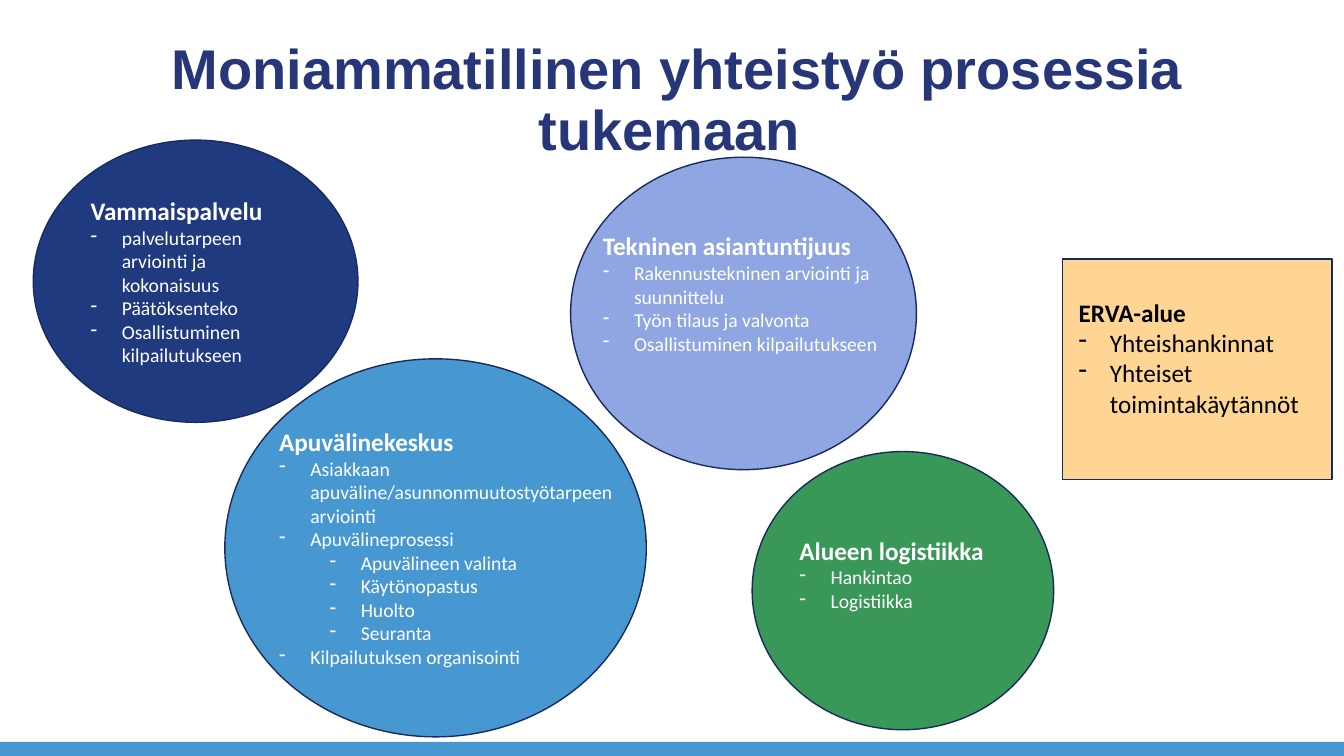
from dataclasses import dataclass

from lxml import etree
from pptx import Presentation
from pptx import util as u
from pptx.dml.color import RGBColor
from pptx.enum import shapes, text
from pptx.oxml import ns

PX = 9144  # EMU per px, 100 px to the inch


@dataclass(frozen=True)
class Theme:
    title_font: str = "Arial"
    body_font: str = "Calibri"
    title_size: int = 40
    heading_size: int = 18
    item_size: int = 14
    title: str = "273678"
    outline: str = "182B5E"
    navy: str = "203A7F"
    blue: str = "4798D1"
    lavender: str = "8FA6E3"
    green: str = "399758"
    sand: str = "FFD594"
    white: str = "FFFFFF"
    black: str = "000000"


class SlideBuilder:
    INDENT, LEVEL_STEP = 31, 50

    def __init__(self, prs, theme):
        self.theme = theme
        self.s = prs.slides.add_slide(prs.slide_layouts[5])

    def box(self, at):
        return [u.Emu(v * PX) for v in at]

    def run(self, p, words, font, size, color, bold=False):
        r = p.add_run()
        r.text = words
        r.font.name, r.font.size, r.font.bold = font, u.Pt(size), bold
        r.font.color.rgb = RGBColor.from_string(color)

    def title(self, at, words):
        t, sp = self.theme, self.s.shapes.title
        sp.left, sp.top, sp.width, sp.height = self.box(at)
        tf = sp.text_frame
        tf.word_wrap = True
        tf.auto_size = text.MSO_AUTO_SIZE.NONE
        tf.vertical_anchor = text.MSO_ANCHOR.TOP
        p = tf.paragraphs[0]
        p.alignment, p.line_spacing = text.PP_ALIGN.CENTER, 0.9
        self.run(p, words, t.title_font, t.title_size, t.title, True)

    def shape(self, kind, at, fill, outline=None):
        sp = self.s.shapes.add_shape(kind, *self.box(at))
        sp.shadow.inherit = False
        sp.fill.solid()
        sp.fill.fore_color.rgb = RGBColor.from_string(fill)
        if outline:
            sp.line.color.rgb = RGBColor.from_string(outline)
            sp.line.width = u.Pt(1)
        else:
            sp.line.fill.background()

    def dash(self, p, level):
        p.level = level
        pPr = p._p.get_or_add_pPr()
        pPr.set("marL", str((self.INDENT + level * self.LEVEL_STEP) * PX))
        pPr.set("indent", str(-self.INDENT * PX))
        etree.SubElement(pPr, ns.qn("a:buChar")).set("char", "-")

    def listing(self, at, heading, items, color, item_size):
        t = self.theme
        tf = self.s.shapes.add_textbox(*self.box(at)).text_frame
        tf.word_wrap = True
        tf.auto_size = text.MSO_AUTO_SIZE.SHAPE_TO_FIT_TEXT
        self.run(tf.paragraphs[0], heading, t.body_font, t.heading_size, color, True)
        for level, words in items:
            p = tf.add_paragraph()
            self.dash(p, level)
            self.run(p, words, t.body_font, item_size, color)


def main():
    prs = Presentation()
    prs.slide_width, prs.slide_height = u.Emu(1333 * PX), u.Emu(750 * PX)
    theme = Theme()
    slide = SlideBuilder(prs, theme)

    # Title and footer band
    slide.title((120, 36, 1103, 103), "Moniammatillinen yhteistyö prosessia tukemaan ")
    slide.shape(shapes.MSO_SHAPE.RECTANGLE, (0, 736, 1333, 14), theme.blue)

    # Partners: circle, fill, text box, heading, (level, item) list
    partners = [
        ((33, 139, 322, 280), theme.navy, (80, 189, 228, 212), "Vammaispalvelu",
         [(0, "palvelutarpeen arviointi ja kokonaisuus"),
          (0, "Päätöksenteko"),
          (0, "Osallistuminen kilpailutukseen")]),
        ((223, 356, 418, 375), theme.blue, (267, 418, 374, 283), "Apuvälinekeskus",
         [(0, "Asiakkaan apuväline/asunnonmuutostyötarpeen arviointi"),
          (0, "Apuvälineprosessi"),
          (1, "Apuvälineen valinta"),
          (1, "Käytönopastus"),
          (1, "Huolto"),
          (1, "Seuranta"),
          (0, "Kilpailutuksen organisointi")]),
        ((566, 156, 343, 310), theme.lavender, (588, 224, 308, 188), "Tekninen asiantuntijuus",
         [(0, "Rakennustekninen arviointi ja suunnittelu"),
          (0, "Työn tilaus ja valvonta"),
          (0, "Osallistuminen kilpailutukseen")]),
        ((746, 448, 299, 276), theme.green, (783, 526, 271, 88), "Alueen logistiikka",
         [(0, "Hankintao"), (0, "Logistiikka")]),
    ]
    for circle, fill, label, heading, items in partners:
        slide.shape(shapes.MSO_SHAPE.OVAL, circle, fill, theme.outline)
        slide.listing(label, heading, items, theme.white, theme.item_size)

    # Regional cooperation
    slide.shape(shapes.MSO_SHAPE.RECTANGLE, (1054, 257, 267, 219), theme.sand, theme.outline)
    slide.listing((1060, 290, 255, 131), "ERVA-alue",
                  [(0, "Yhteishankinnat"), (0, "Yhteiset toimintakäytännöt")],
                  theme.black, theme.heading_size)

    prs.save("out.pptx")


if __name__ == "__main__":
    main()
